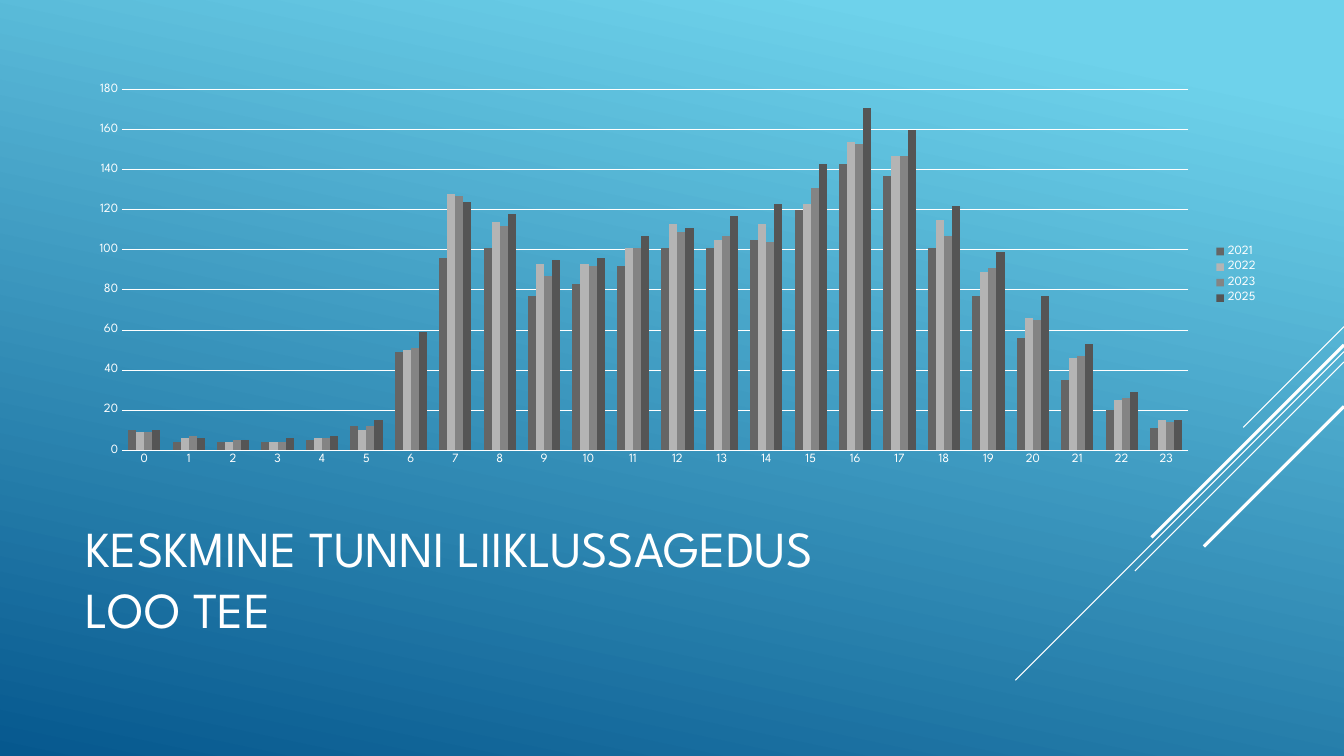
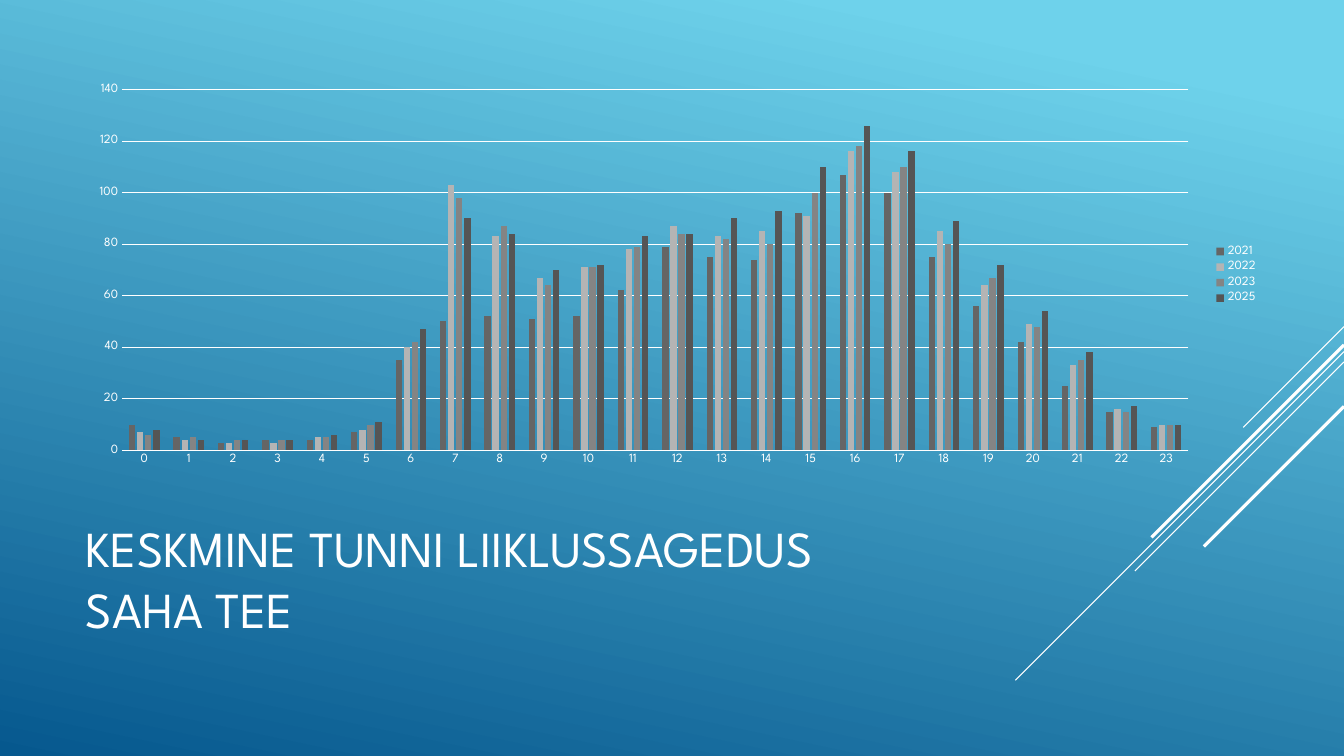
import lxml.etree
import pptx
import pptx.chart.data
import pptx.dml.color
import pptx.enum.chart
import pptx.enum.shapes
import pptx.enum.text
import pptx.oxml.ns
import pptx.util
from pptx.util import Cm

RGBColor = pptx.dml.color.RGBColor
WHITE = RGBColor(0xFF, 0xFF, 0xFF)
SKY_BLUE = RGBColor(0x6E, 0xD2, 0xEB)
DEEP_BLUE = RGBColor(0x06, 0x58, 0x8E)
YEAR_COLOURS = {
    "2021": RGBColor(0x65, 0x65, 0x65),
    "2022": RGBColor(0xB4, 0xB4, 0xB4),
    "2023": RGBColor(0x84, 0x84, 0x84),
    "2025": RGBColor(0x55, 0x55, 0x55),
}
FONT = "League Spartan"
SLIDE_WIDTH, SLIDE_HEIGHT = Cm(33.87), Cm(19.05)
LEFT_MARGIN = Cm(1.91)
HOURS = [str(hour) for hour in range(24)]

# Top on the right edge (cm), horizontal and vertical reach (cm), width (pt)
DIAGONALS = [
    (8.23, 2.54, 0.75),
    (8.86, 8.28, 0.75),
    (9.12, 5.27, 0.75),
    (8.69, 4.85, 2.25),
    (10.24, 3.53, 2.25),
]

LOO_TRAFFIC = {
    "2021": [10, 4, 4, 4, 5, 12, 49, 96, 101, 77, 83, 92,
             101, 101, 105, 120, 143, 137, 101, 77, 56, 35, 20, 11],
    "2022": [9, 6, 4, 4, 6, 10, 50, 128, 114, 93, 93, 101,
             113, 105, 113, 123, 154, 147, 115, 89, 66, 46, 25, 15],
    "2023": [9, 7, 5, 4, 6, 12, 51, 127, 112, 87, 92, 101,
             109, 107, 104, 131, 153, 147, 107, 91, 65, 47, 26, 14],
    "2025": [10, 6, 5, 6, 7, 15, 59, 124, 118, 95, 96, 107,
             111, 117, 123, 143, 171, 160, 122, 99, 77, 53, 29, 15],
}
SAHA_TRAFFIC = {
    "2021": [10, 5, 3, 4, 4, 7, 35, 50, 52, 51, 52, 62,
             79, 75, 74, 92, 107, 100, 75, 56, 42, 25, 15, 9],
    "2022": [7, 4, 3, 3, 5, 8, 40, 103, 83, 67, 71, 78,
             87, 83, 85, 91, 116, 108, 85, 64, 49, 33, 16, 10],
    "2023": [6, 5, 4, 4, 5, 10, 42, 98, 87, 64, 71, 79,
             84, 82, 80, 100, 118, 110, 80, 67, 48, 35, 15, 10],
    "2025": [8, 4, 4, 4, 6, 11, 47, 90, 84, 70, 72, 83,
             84, 90, 93, 110, 126, 116, 89, 72, 54, 38, 17, 10],
}


def style_font(font, size):
    font.name = FONT
    font.size = pptx.util.Pt(size)
    font.color.rgb = WHITE


def style_line(line, width=0.75):
    line.color.rgb = WHITE
    line.width = pptx.util.Pt(width)


def set_background(master):
    fill = master.background.fill
    fill.gradient()
    fill.gradient_angle = 258
    stops = zip(fill.gradient_stops, (0.1, 1.0), (SKY_BLUE, DEEP_BLUE))
    for stop, position, colour in stops:
        stop.position = position
        stop.color.rgb = colour


def add_diagonals(slide):
    """Draw the diagonal lines and move them to the slide's layout."""
    for top, reach, width in DIAGONALS:
        connector = slide.shapes.add_connector(
            pptx.enum.shapes.MSO_CONNECTOR.STRAIGHT,
            SLIDE_WIDTH, Cm(top), SLIDE_WIDTH - Cm(reach), Cm(top + reach))
        style_line(connector.line, width)
        lxml.etree.SubElement(connector.element.spPr,
                              pptx.oxml.ns.qn("a:effectLst"))
        slide.slide_layout.shapes.element.append(connector.element)


def set_title(slide, road):
    title = slide.shapes.title
    title.left, title.top = LEFT_MARGIN, Cm(12.47)
    title.width, title.height = Cm(23.7), Cm(4.19)
    text_frame = title.text_frame
    text_frame.text = f"KESKMINE TUNNI LIIKLUSSAGEDUS\v{road}"
    text_frame.word_wrap = True
    text_frame.auto_size = pptx.enum.text.MSO_AUTO_SIZE.NONE
    text_frame.vertical_anchor = pptx.enum.text.MSO_ANCHOR.MIDDLE
    paragraph = text_frame.paragraphs[0]
    paragraph.alignment = pptx.enum.text.PP_ALIGN.LEFT
    for run in paragraph.runs:
        style_font(run.font, 36)


def style_axes(chart, maximum):
    for axis in (chart.category_axis, chart.value_axis):
        axis.major_tick_mark = pptx.enum.chart.XL_TICK_MARK.NONE
        axis.minor_tick_mark = pptx.enum.chart.XL_TICK_MARK.NONE
        style_font(axis.tick_labels.font, 9)
    style_line(chart.category_axis.format.line)
    value_axis = chart.value_axis
    value_axis.minimum_scale = 0
    value_axis.maximum_scale = maximum
    value_axis.major_unit = 20
    value_axis.format.line.fill.background()
    style_line(value_axis.major_gridlines.format.line)


def add_traffic_chart(slide, traffic, maximum, gap, overlap):
    chart_data = pptx.chart.data.CategoryChartData()
    chart_data.categories = HOURS
    for year, values in traffic.items():
        chart_data.add_series(year, values)
    chart = slide.shapes.add_chart(
        pptx.enum.chart.XL_CHART_TYPE.COLUMN_CLUSTERED,
        LEFT_MARGIN, Cm(1.91), Cm(30.05), Cm(10.03), chart_data).chart
    style_font(chart.font, 10)
    chart.has_title = False
    chart.has_legend = True
    chart.legend.position = pptx.enum.chart.XL_LEGEND_POSITION.RIGHT
    chart.legend.include_in_layout = False
    style_font(chart.legend.font, 9)
    style_axes(chart, maximum)
    plot = chart.plots[0]
    plot.vary_by_categories = False
    plot.gap_width, plot.overlap = gap, overlap
    for series in plot.series:
        series.format.fill.solid()
        series.format.fill.fore_color.rgb = YEAR_COLOURS[series.name]


def add_traffic_slide(presentation, road, traffic, maximum, gap, overlap):
    slide = presentation.slides.add_slide(presentation.slide_layouts[5])
    set_title(slide, road)
    add_traffic_chart(slide, traffic, maximum, gap, overlap)
    return slide


def main():
    presentation = pptx.Presentation()
    presentation.slide_width = SLIDE_WIDTH
    presentation.slide_height = SLIDE_HEIGHT
    set_background(presentation.slide_master)
    loo_slide = add_traffic_slide(
        presentation, "LOO TEE", LOO_TRAFFIC, maximum=180, gap=150, overlap=0)
    add_diagonals(loo_slide)
    add_traffic_slide(
        presentation, "SAHA TEE", SAHA_TRAFFIC, maximum=140, gap=219, overlap=-27)
    presentation.save("out.pptx")


if __name__ == "__main__":
    main()
